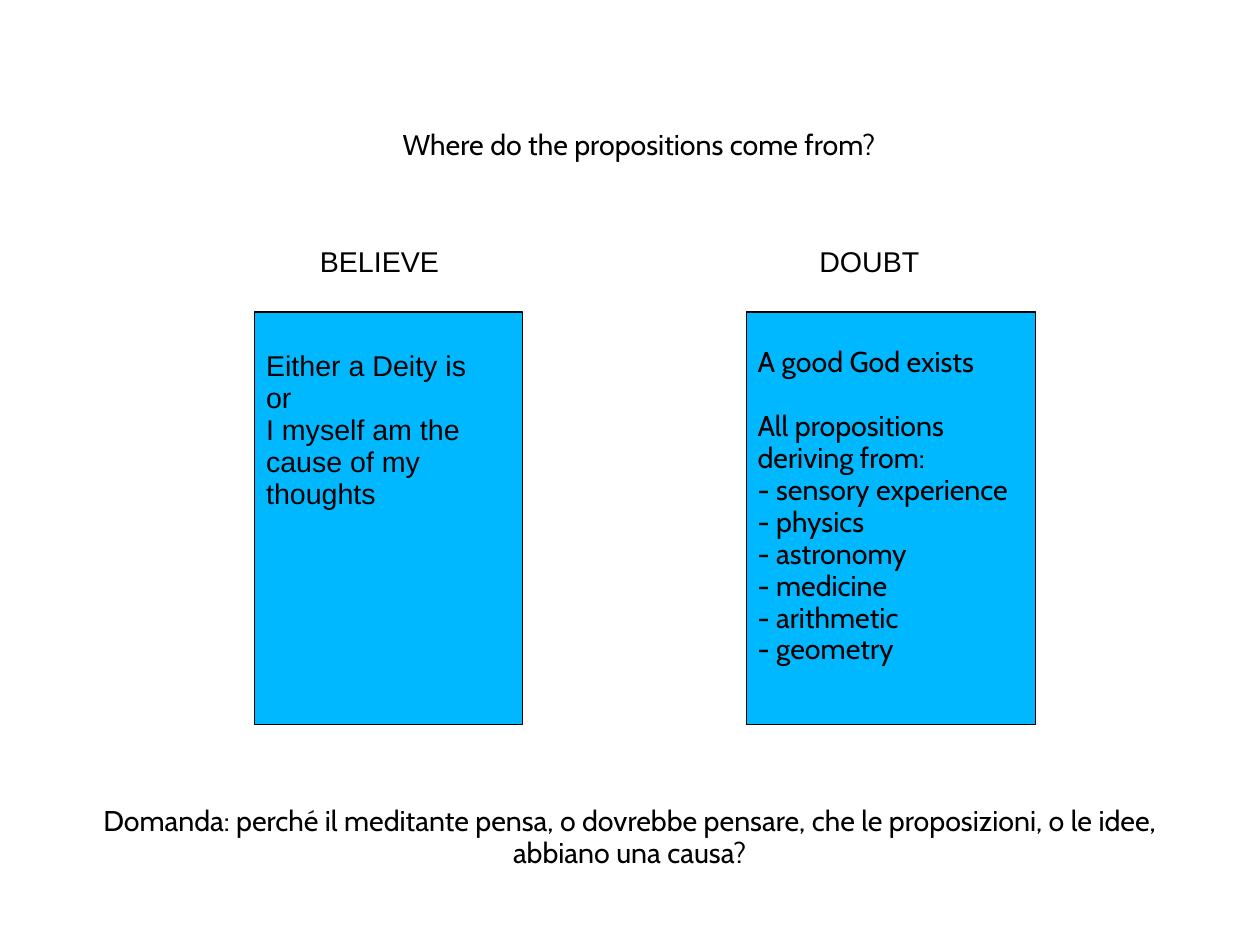
"""Build the slide on where believed and doubted propositions come from."""
from pptx import Presentation
from pptx.dml.color import RGBColor
from pptx.enum.shapes import MSO_SHAPE
from pptx.enum.text import MSO_ANCHOR, PP_ALIGN
from pptx.util import Inches, Pt


def color(value):
    return RGBColor.from_string(value)


def write(shape, lines, font, align, top_inset=0.05):
    frame = shape.text_frame
    layout = {
        "word_wrap": True,
        "vertical_anchor": MSO_ANCHOR.TOP,
        "margin_left": Inches(0.1),
        "margin_right": Inches(0.1),
        "margin_top": Inches(top_inset),
        "margin_bottom": Inches(0.05),
    }
    for name, value in layout.items():
        setattr(frame, name, value)
    for index, line in enumerate(lines):
        paragraph = frame.paragraphs[0] if index == 0 else frame.add_paragraph()
        paragraph.alignment = align
        paragraph.line_spacing = 0.93
        run = paragraph.add_run()
        run.text = line
        run.font.name = font
        run.font.size = Pt(18)
        run.font.color.rgb = color("000000")


prs = Presentation()
prs.slide_width, prs.slide_height = Inches(28 / 2.54), Inches(21 / 2.54)
slide = prs.slides.add_slide(prs.slide_layouts[6])

believed = ["Either a Deity is", "or", "I myself am the cause of my thoughts"]
sciences = ["sensory experience", "physics", "astronomy", "medicine", "arithmetic", "geometry"]
doubted = ["A good God exists", "All propositions deriving from:"]
doubted += [f"- {science}" for science in sciences]

panels = [
    (2.23, 2.34, believed, "Arial", 0.34),
    (6.53, 2.53, doubted, "Cabin", 0.31),
]
for left, width, propositions, font, top_inset in panels:
    panel = slide.shapes.add_shape(
        MSO_SHAPE.RECTANGLE, Inches(left), Inches(2.73), Inches(width), Inches(3.61)
    )
    panel.shadow.inherit = False
    panel.fill.solid()
    panel.fill.fore_color.rgb = color("00B8FF")
    panel.line.color.rgb = color("000000")
    panel.line.width = Pt(0.75)
    write(panel, propositions, font, PP_ALIGN.LEFT, top_inset)
    if propositions is doubted:
        panel.text_frame.paragraphs[1].space_before = Pt(20)

question = (
    "Domanda: perché il meditante pensa, o dovrebbe pensare, "
    "che le proposizioni, o le idee, abbiano una causa?"
)
captions = [
    ("BELIEVE", 2.7, 2.11, 1.25, 0.38, "Arial", PP_ALIGN.LEFT),
    ("DOUBT", 7.07, 2.11, 1.09, 0.38, "Arial", PP_ALIGN.LEFT),
    ("Where do the propositions come from?", 3.32, 1.09, 4.54, 0.38, "Cabin", PP_ALIGN.CENTER),
    (question, 0.56, 7, 9.9, 0.66, "Cabin", PP_ALIGN.CENTER),
]
for words, left, top, width, height, font, align in captions:
    caption = slide.shapes.add_textbox(Inches(left), Inches(top), Inches(width), Inches(height))
    write(caption, [words], font, align)

prs.save("out.pptx")
